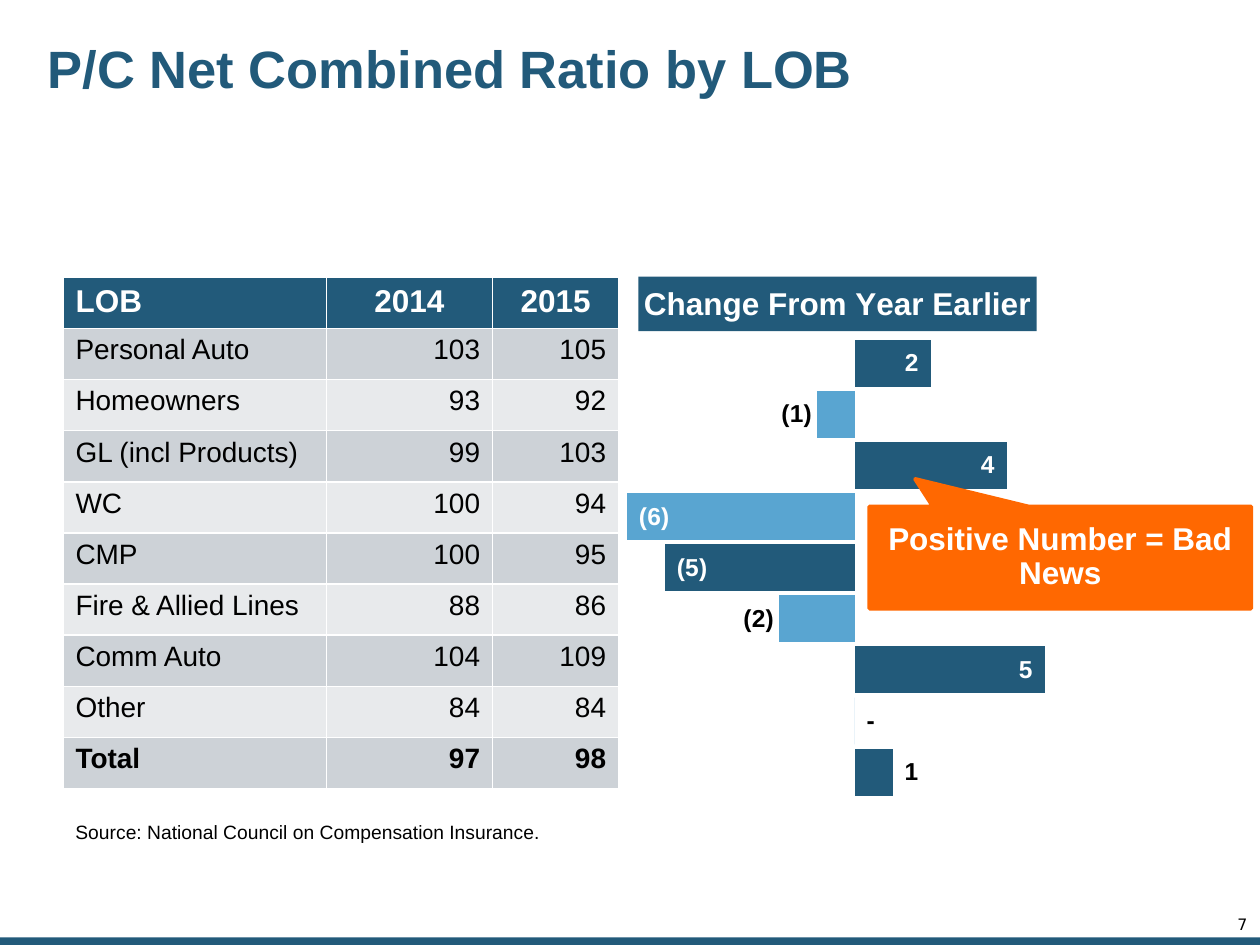
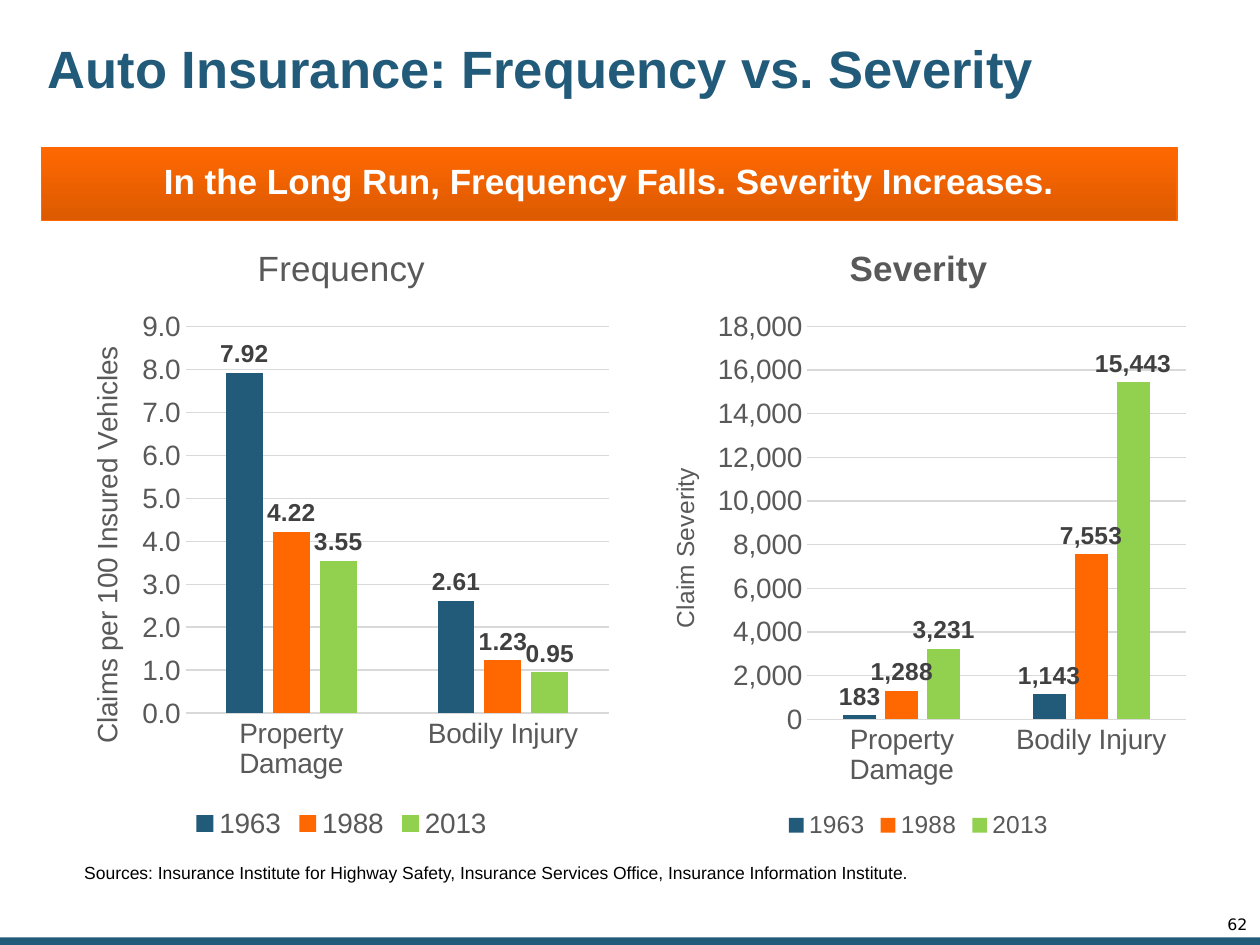
from pptx import Presentation
from pptx.chart.data import CategoryChartData
from pptx.dml.color import RGBColor
from pptx.enum.chart import XL_CHART_TYPE as ChartType
from pptx.enum.chart import XL_LABEL_POSITION as LabelPos
from pptx.enum.chart import XL_LEGEND_POSITION as LegendPos
from pptx.enum.chart import XL_TICK_MARK as TickMark
from pptx.enum.shapes import MSO_SHAPE as Shape
from pptx.enum.text import MSO_ANCHOR as Anchor
from pptx.enum.text import PP_ALIGN as Align
from pptx.oxml import parse_xml
from pptx.oxml.ns import nsdecls, qn
from pptx.util import Inches, Pt

NAVY, SKY, ORANGE, GREEN = "225A7A", "59A5D1", "FF6801", "92D050"
WHITE, BLACK, GREY, DARK, RULE = "FFFFFF", "000000", "595959", "404040", "D9D9D9"
BAND_COLORS = ("CDD2D7", "E8EAEC")
FONT = "Arial"
TEXT_MARGINS = (0.1, 0.05, 0.1, 0.05)

RATIO_HEADER = ("LOB", "2014", "2015")
RATIOS = [
    ("Personal Auto", 103, 105),
    ("Homeowners", 93, 92),
    ("GL (incl Products)", 99, 103),
    ("WC", 100, 94),
    ("CMP", 100, 95),
    ("Fire & Allied Lines", 88, 86),
    ("Comm Auto", 104, 109),
    ("Other", 84, 84),
    ("Total", 97, 98),
]
RATIO_WIDTHS = (2.09, 1.32, 1.0)
CHANGE_FORMAT = '_(* #,##0_);_(* \\(#,##0\\);_(* "-"??_);_(@_)'
SKY_BARS = (1, 3, 5, 7)
OUTSIDE_LABELS = (1, 5, 7, 8)

CLAIM_TYPES = ("Property Damage", "Bodily Injury")
YEAR_COLORS = {"1963": NAVY, "1988": ORANGE, "2013": GREEN}
CLAIM_CHARTS = [
    dict(title="Frequency", bold=False, axis_title="Claims per 100 Insured Vehicles",
         left=0.5, small=16, top_value=9, step=1,
         axis_format="#,##0.0", label_format="0.00",
         plot=(0.22, 0.17, 0.76, 0.62),
         values=[(7.92, 2.61), (4.22, 1.23), (3.55, 0.95)]),
    dict(title="Severity", bold=True, axis_title="Claim Severity",
         left=5.08, small=14, top_value=18000, step=2000,
         axis_format="#,##0", label_format="#,##0",
         plot=(0.3, 0.17, 0.68, 0.63),
         values=[(183, 1143), (1288, 7553), (3231, 15443)]),
]


def rgb(color):
    return RGBColor.from_string(color)


def style(font, size, color, bold=False, name=FONT):
    font.size, font.bold, font.name = Pt(size), bold, name
    font.color.rgb = rgb(color)


def paint(fill, color):
    fill.solid()
    fill.fore_color.rgb = rgb(color)


def write(box, text, size, color, bold=False, name=FONT, align=Align.LEFT,
          anchor=Anchor.TOP, margins=TEXT_MARGINS, spacing=1.0):
    frame = box.text_frame
    frame.text = text
    frame.word_wrap = True
    frame.vertical_anchor = anchor
    (frame.margin_left, frame.margin_top,
     frame.margin_right, frame.margin_bottom) = map(Inches, margins)
    para = frame.paragraphs[0]
    para.alignment, para.line_spacing = align, spacing
    style(para.runs[0].font, size, color, bold, name)


def add_text(page, place, *args, **options):
    write(page.shapes.add_textbox(*map(Inches, place)), *args, **options)


def add_block(page, kind, place, color, line=None, line_width=1):
    block = page.shapes.add_shape(kind, *map(Inches, place))
    block.shadow.inherit = False
    paint(block.fill, color)
    if line:
        block.line.color.rgb = rgb(line)
        block.line.width = Pt(line_width)
    else:
        block.line.fill.background()
    return block


def add_page(deck, title, number):
    """Add a page with the shared title, bottom band and page number."""
    page = deck.slides.add_slide(deck.slide_layouts[6])
    add_block(page, Shape.RECTANGLE, (0, 7.44, 10, 0.06), NAVY)
    add_text(page, (0.33, 0.1, 8.09, 0.94), title, 30, NAVY, True,
             anchor=Anchor.MIDDLE, margins=(0.05,) * 4, spacing=0.9)
    add_text(page, (9.41, 7.28, 0.49, 0.13), str(number), 9, BLACK,
             name="DejaVu Sans", align=Align.RIGHT, margins=(0,) * 4, spacing=0.85)
    return page


def set_layout(element, index, **fractions):
    """Fix a chart part at fractions of the chart area."""
    for old in element.findall(qn("c:layout")):
        element.remove(old)
    target = '<c:layoutTarget val="inner"/>' if "w" in fractions else ""
    modes = '<c:xMode val="edge"/><c:yMode val="edge"/>'
    sizes = "".join(f'<c:{key} val="{value}"/>' for key, value in fractions.items())
    element.insert(index, parse_xml(
        f'<c:layout {nsdecls("c")}><c:manualLayout>{target}{modes}{sizes}'
        '</c:manualLayout></c:layout>'))


def add_chart(page, kind, place, data, plot_place, gap):
    chart = page.shapes.add_chart(kind, *map(Inches, place), data).chart
    style(chart.font, 16, GREY)
    chart.has_legend = False
    plot = chart.plots[0]
    plot.vary_by_categories = False
    plot.gap_width = gap
    set_layout(chart.element.find(".//" + qn("c:plotArea")), 0,
               **dict(zip("xywh", plot_place)))
    return chart


def set_title(owner, text, size, color, bold=False):
    """Title a chart or an axis, whichever is given."""
    owner.has_title = True
    title = owner.chart_title if hasattr(owner, "chart_title") else owner.axis_title
    title.text_frame.text = text
    style(title.text_frame.paragraphs[0].runs[0].font, size, color, bold)
    return title


def show_labels(series, color, position, number_format):
    labels = series.data_labels
    labels.show_value = True
    labels.position = position
    labels.number_format = number_format
    labels.number_format_is_linked = False
    style(labels.font, 14, color, True)


def add_ratio_table(page):
    rows = [RATIO_HEADER, *RATIOS]
    table = page.shapes.add_table(len(rows), len(RATIO_HEADER), Inches(0.5), Inches(2.2),
                                  Inches(sum(RATIO_WIDTHS)), Inches(4.06)).table
    for column, width in zip(table.columns, RATIO_WIDTHS):
        column.width = Inches(width)
    for r, row in enumerate(rows):
        header = r == 0
        for c, value in enumerate(row):
            cell = table.cell(r, c)
            cell.text = str(value)
            paint(cell.fill, NAVY if header else BAND_COLORS[(r - 1) % 2])
            para = cell.text_frame.paragraphs[0]
            if c:
                para.alignment = Align.CENTER if header else Align.RIGHT
            style(para.runs[0].font, 18 if header else 16, WHITE if header else BLACK,
                  header or row[0] == "Total")


def add_change_chart(page):
    data = CategoryChartData(number_format=CHANGE_FORMAT)
    data.categories = [str(n + 1) for n in range(len(RATIOS))]
    data.add_series("Series 1", [after - before for _, before, after in RATIOS])
    chart = add_chart(page, ChartType.BAR_CLUSTERED, (4.27, 2.02, 4.42, 4.4), data,
                      (0.16, 0.15, 0.75, 0.83), 9)
    title = set_title(chart, "Change From Year Earlier", 18, WHITE, True)
    paint(title.format.fill, NAVY)
    set_layout(chart.element.find(".//" + qn("c:title")), 1, x=0.18, y=0.04)

    chart.category_axis.reverse_order = True
    chart.category_axis.visible = False
    axis = chart.value_axis
    axis.minimum_scale, axis.maximum_scale = -6, 5
    axis.has_major_gridlines = False
    axis.visible = False

    series = chart.plots[0].series[0]
    series.invert_if_negative = False
    paint(series.format.fill, NAVY)
    show_labels(series, WHITE, LabelPos.INSIDE_END, CHANGE_FORMAT)
    for index in SKY_BARS:
        paint(series.points[index].format.fill, SKY)
    for index in OUTSIDE_LABELS:
        label = series.points[index].data_label
        style(label.font, 14, BLACK, True)
        label.position = LabelPos.OUTSIDE_END


def add_claim_chart(page, item):
    data = CategoryChartData(number_format=item["label_format"])
    data.categories = CLAIM_TYPES
    for year, values in zip(YEAR_COLORS, item["values"]):
        data.add_series(year, values)
    chart = add_chart(page, ChartType.COLUMN_CLUSTERED, (item["left"], 1.75, 4.42, 4.95),
                      data, item["plot"], 219)
    chart.plots[0].overlap = -27
    set_title(chart, item["title"], 20, GREY, item["bold"])
    chart.has_legend = True
    chart.legend.position = LegendPos.BOTTOM
    chart.legend.include_in_layout = False
    style(chart.legend.font, item["small"], GREY)

    categories, axis = chart.category_axis, chart.value_axis
    for each in (categories, axis):
        each.major_tick_mark = TickMark.NONE
        style(each.tick_labels.font, 16, GREY)
    set_title(axis, item["axis_title"], item["small"], GREY)
    axis.minimum_scale, axis.maximum_scale = 0, item["top_value"]
    axis.major_unit = item["step"]
    axis.tick_labels.number_format = item["axis_format"]
    axis.tick_labels.number_format_is_linked = False
    axis.format.line.fill.background()
    for line in (categories.format.line, axis.major_gridlines.format.line):
        line.color.rgb = rgb(RULE)
        line.width = Pt(0.75)

    for series, color in zip(chart.plots[0].series, YEAR_COLORS.values()):
        paint(series.format.fill, color)
        show_labels(series, DARK, LabelPos.OUTSIDE_END, item["label_format"])


def build_ratio_page(deck):
    page = add_page(deck, "P/C Net Combined Ratio by LOB", 7)
    add_ratio_table(page)
    add_change_chart(page)
    add_text(page, (0.5, 6.46, 8.05, 0.29),
             "Source: National Council on Compensation Insurance.", 11, BLACK)
    callout = add_block(page, Shape.RECTANGULAR_CALLOUT, (6.9, 4.02, 3.03, 0.81),
                        ORANGE, ORANGE, 2.25)
    callout.adjustments[0], callout.adjustments[1] = -0.38, -0.77
    write(callout, "Positive Number = Bad News", 18, WHITE, True, align=Align.CENTER,
          anchor=Anchor.MIDDLE, margins=(0.1,) * 4, spacing=0.9)


def build_claims_page(deck):
    page = add_page(deck, "Auto Insurance: Frequency vs. Severity", 62)
    for item in CLAIM_CHARTS:
        add_claim_chart(page, item)
    add_text(page, (0.57, 6.79, 7.85, 0.27),
             "Sources: Insurance Institute for Highway Safety, Insurance Services Office, "
             "Insurance Information Institute.", 10, BLACK)
    banner = add_block(page, Shape.RECTANGLE, (0.33, 1.17, 9.01, 0.58), ORANGE, ORANGE)
    banner.fill.gradient()
    banner.fill.gradient_angle = 270
    for stop, color in zip(banner.fill.gradient_stops, (ORANGE, "DC5A01")):
        stop.color.rgb = rgb(color)
    write(banner, "In the Long Run, Frequency Falls. Severity Increases.", 20, WHITE, True,
          align=Align.CENTER, anchor=Anchor.MIDDLE, margins=(0.1, 0.05, 0.1, 0.07),
          spacing=0.95)


def main():
    deck = Presentation()
    deck.slide_width, deck.slide_height = Inches(10), Inches(7.5)
    build_ratio_page(deck)
    build_claims_page(deck)
    deck.save("out.pptx")


if __name__ == "__main__":
    main()
